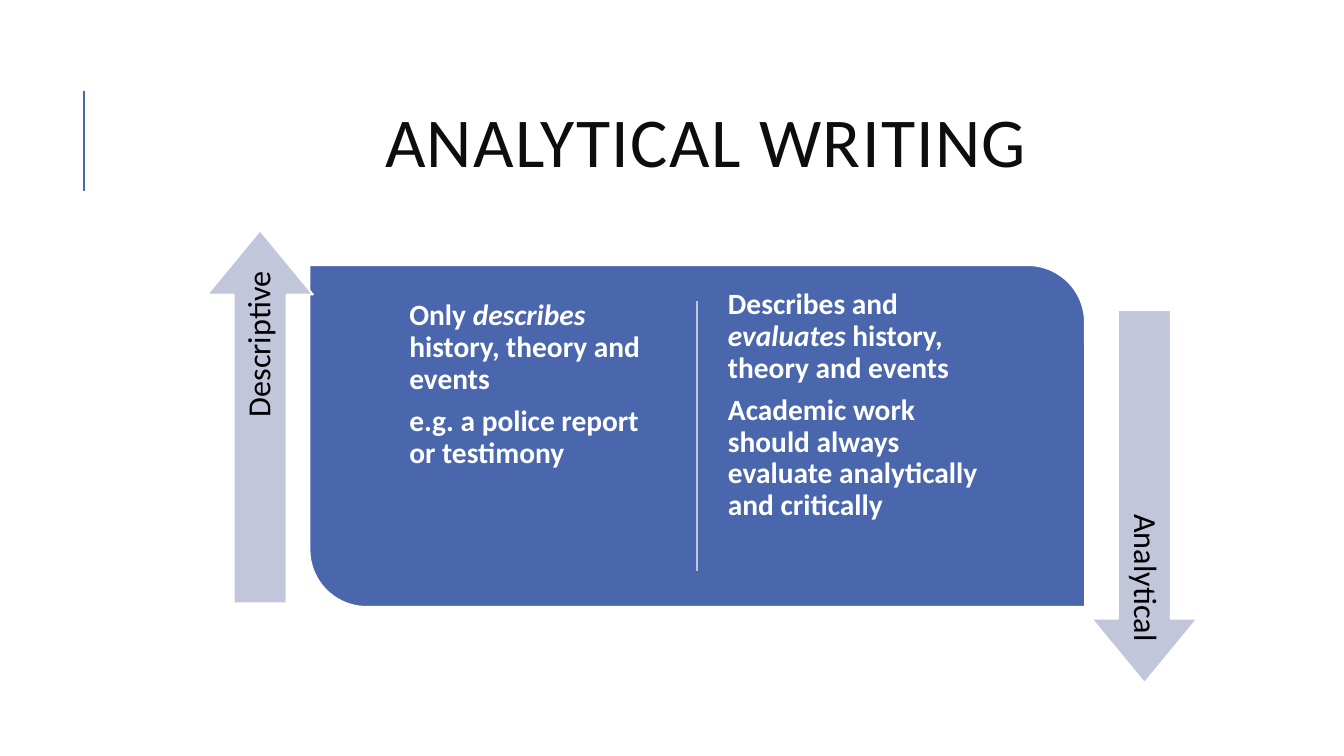
from dataclasses import dataclass

from pptx import Presentation
from pptx.dml.color import RGBColor
from pptx.enum.shapes import MSO_CONNECTOR as Connector, MSO_SHAPE as Preset
from pptx.enum.text import MSO_ANCHOR as Anchor, MSO_AUTO_SIZE as AutoSize, PP_ALIGN as Align
from pptx.oxml.ns import qn
from pptx.util import Inches, Pt


@dataclass(frozen=True)
class Theme:
    font: str = "Calibri"
    blue: str = "4A66AC"
    pale: str = "C1C6DB"
    white: str = "FFFFFF"
    black: str = "000000"
    title_ink: str = "0D0D0D"
    title_size: int = 50
    body_size: int = 21
    label_size: int = 23
    rule: float = 1.5
    outline: float = 1.25
    leading: float = 0.9
    gap_share: float = 0.35


THEME = Theme()
WIDTH, HEIGHT = Inches(13.33), Inches(7.5)

# Boxes are left, top, width, height in percent of the slide
TITLE_BOX = (8.4, 8.53, 89.57, 21.87)
PANEL = (23.03, 35.07, 57.69, 45.2)
DIVIDER_X = PANEL[0] + PANEL[2] / 2
ARROW_SIZE = (27.76, 14)
LABEL_SIZE = (25.43, 6.93)
LABEL_SHIFT = 2.07  # from the arrow's centre towards its tail

# Each paragraph is a list of (text, italic) runs
COLUMNS = [
    ((29.78, 38.53, 20.55, 38.4), [
        [("Only ", False), ("describes ", True), ("history, theory and events", False)],
        [("e.g. a police report or testimony", False)],
    ]),
    ((53.49, 37.07, 20.55, 41.2), [
        [("Describes and ", False), ("evaluates ", True), ("history, theory and events", False)],
        [("Academic work should always evaluate analytically and critically", False)],
    ]),
]

# Label, centre x, centre y, rotation, direction of the tail
ARROWS = [
    ("Descriptive", 19.35, 55.13, 270, 1),
    ("Analytical", 85.15, 65.67, 90, -1),
]


def across(share):
    return round(WIDTH * share / 100)


def down(share):
    return round(HEIGHT * share / 100)


def place(box):
    left, top, width, height = box
    return across(left), down(top), across(width), down(height)


def centred(x, y, size):
    width, height = size
    return x - width / 2, y - height / 2, width, height


def add_run(paragraph, text, size, color, bold=False, italic=False):
    run = paragraph.add_run()
    run.text = text
    font = run.font
    font.name, font.size = THEME.font, Pt(size)
    font.bold, font.italic = bold, italic
    font.color.rgb = RGBColor.from_string(color)
    return run


def add_line(slide, x, top, bottom, color, weight):
    line = slide.shapes.add_connector(
        Connector.STRAIGHT, across(x), down(top), across(x), down(bottom))
    line.line.color.rgb = RGBColor.from_string(color)
    line.line.width = Pt(weight)
    properties = line._element.spPr
    properties.append(properties.makeelement(qn("a:effectLst"), {}))


def add_block(slide, preset, box, fill, adjustments, rotation=0):
    block = slide.shapes.add_shape(preset, *place(box))
    block.shadow.inherit = False
    block.rotation = rotation
    for index, value in enumerate(adjustments):
        block.adjustments[index] = value
    block.fill.solid()
    block.fill.fore_color.rgb = RGBColor.from_string(fill)
    block.line.color.rgb = RGBColor.from_string(THEME.white)
    block.line.width = Pt(THEME.outline)


def add_text(slide, box, paragraphs, size, color, inset, bold=False,
             align=Align.LEFT, anchor=Anchor.TOP, rotation=0):
    holder = slide.shapes.add_textbox(*place(box))
    holder.rotation = rotation
    frame = holder.text_frame
    frame.word_wrap = True
    frame.vertical_anchor = anchor
    frame.margin_left = frame.margin_right = Inches(inset)
    frame.margin_top = frame.margin_bottom = Inches(inset)
    for index, runs in enumerate(paragraphs):
        paragraph = frame.add_paragraph() if index else frame.paragraphs[0]
        paragraph.alignment = align
        paragraph.line_spacing = THEME.leading
        paragraph.space_after = Pt(size * THEME.gap_share)
        for text, italic in runs:
            add_run(paragraph, text, size, color, bold, italic)


def set_title(slide, text):
    title = slide.shapes.title
    title.left, title.top, title.width, title.height = place(TITLE_BOX)
    frame = title.text_frame
    frame.auto_size = AutoSize.NONE
    frame.vertical_anchor = Anchor.MIDDLE
    heading = frame.paragraphs[0]
    heading.alignment = Align.CENTER
    heading.line_spacing = 0.8
    run = add_run(heading, text, THEME.title_size, THEME.title_ink)
    run.font._element.set("spc", "100")


def add_labelled_arrow(slide, label, x, y, rotation, tail):
    add_block(slide, Preset.RIGHT_ARROW, centred(x, y, ARROW_SIZE),
              THEME.pale, (0.498, 0.607), rotation)
    add_text(slide, centred(x, y + tail * LABEL_SHIFT, LABEL_SIZE), [[(label, False)]],
             THEME.label_size, THEME.black, 0.1, align=Align.RIGHT,
             anchor=Anchor.MIDDLE, rotation=rotation)


def main():
    deck = Presentation()
    deck.slide_width, deck.slide_height = WIDTH, HEIGHT
    slide = deck.slides.add_slide(deck.slide_layouts.get_by_name("Title Only"))

    # Heading with its accent rule
    add_line(slide, 6.25, 12, 25.33, THEME.blue, THEME.rule)
    set_title(slide, "ANALYTICAL WRITING ")

    # Panel comparing the two kinds of writing
    add_block(slide, Preset.ROUND_2_DIAG_RECTANGLE, PANEL, THEME.blue, (0, 0.167))
    add_line(slide, DIVIDER_X, 39.87, 75.47, THEME.pale, THEME.outline)
    for box, paragraphs in COLUMNS:
        add_text(slide, box, paragraphs, THEME.body_size, THEME.white, 0.09, bold=True)

    # Arrows on either side
    for arrow in ARROWS:
        add_labelled_arrow(slide, *arrow)

    deck.save("out.pptx")


if __name__ == "__main__":
    main()
